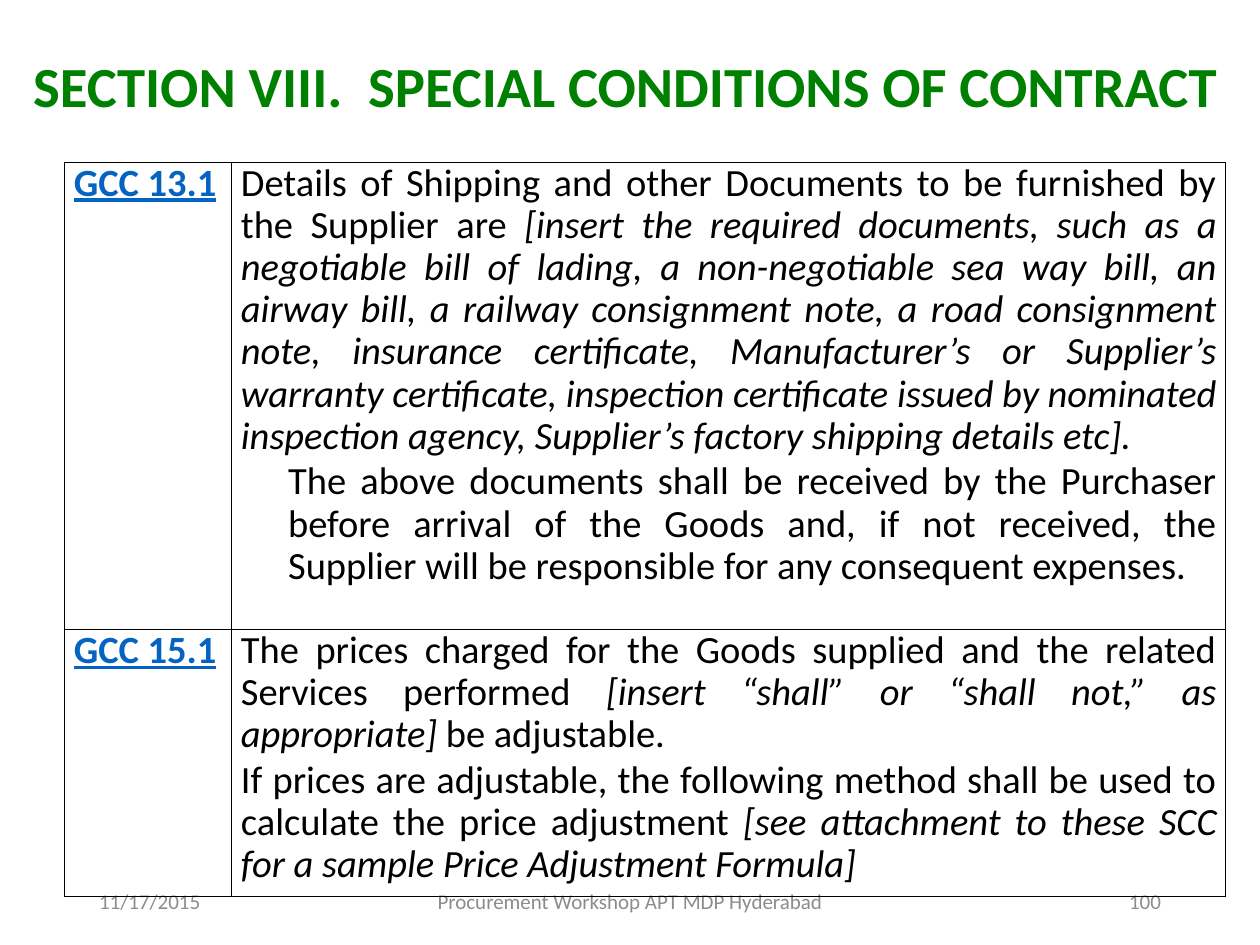
import pptx
import pptx.util
import pptx.dml.color
import pptx.enum.text
import pptx.oxml
import pptx.oxml.ns

Pt = pptx.util.Pt
ALIGN = pptx.enum.text.PP_ALIGN
ANCHOR = pptx.enum.text.MSO_ANCHOR


def color(hex_string):
    return pptx.dml.color.RGBColor.from_string(hex_string)


def write(paragraph, text, size=22, fill="000000", bold=False, italic=False,
          underline=False, align=ALIGN.LEFT, spacing=0.9, after=0):
    paragraph.alignment = align
    paragraph.line_spacing = spacing
    paragraph.space_after = Pt(after)
    run = paragraph.add_run()
    run.text = text
    run.font.name = "Calibri"
    run.font.size = Pt(size)
    run.font.bold = bold
    run.font.italic = italic
    run.font.underline = underline
    run.font.color.rgb = color(fill)


deck = pptx.Presentation()
deck.slide_width, deck.slide_height = Pt(720), Pt(540)
slide = deck.slides.add_slide(deck.slide_layouts[6])

# Title and footer line
footer = dict(size=12, fill="8C8C8C", spacing=1.0)
lines = [
    ("SECTION VIII.  SPECIAL CONDITIONS OF CONTRACT", (8.6, 20.9, 697.7, 51.1), ANCHOR.BOTTOM,
     dict(size=32.4, fill="008000", bold=True, align=ALIGN.CENTER)),
    ("11/17/2015", (49.5, 500.5, 162, 28.75), ANCHOR.MIDDLE, footer),
    ("Procurement Workshop APT MDP Hyderabad", (238.5, 500.5, 243, 28.75), ANCHOR.MIDDLE,
     dict(footer, align=ALIGN.CENTER)),
    ("100", (508.5, 500.5, 162, 28.75), ANCHOR.MIDDLE, dict(footer, align=ALIGN.RIGHT)),
]
for text, place, anchor, style in lines:
    frame = slide.shapes.add_textbox(*[Pt(length) for length in place]).text_frame
    frame.word_wrap = True
    frame.vertical_anchor = anchor
    write(frame.paragraphs[0], text, **style)

# Clauses: heading, row height, then paragraphs as (indent, [(text, italic)])
clauses = [
    ("GCC 13.1", 267, [
        (0, [("Details of Shipping and other Documents to be furnished by the Supplier are ", False),
             ("[insert the required documents, such as a negotiable bill of lading, "
              "a non-negotiable sea way bill, an airway bill, a railway consignment note, "
              "a road consignment note, insurance certificate, Manufacturer’s or Supplier’s "
              "warranty certificate, inspection certificate issued by nominated inspection "
              "agency, Supplier’s factory shipping details etc].", True)]),
        (27, [("The above documents shall be received by the Purchaser before arrival of the "
               "Goods and, if not received, the Supplier will be responsible for any "
               "consequent expenses.", False)]),
    ]),
    ("GCC 15.1", 152.5, [
        (0, [("The prices charged for the Goods supplied and the related Services performed ", False),
             ("[insert “shall” or “shall not,” as appropriate]", True),
             (" be adjustable.", False)]),
        (0, [("If prices are adjustable, the following method shall be used to calculate "
              "the price adjustment ", False),
             ("[see attachment to these SCC for a sample Price Adjustment Formula]", True)]),
    ]),
]
table = slide.shapes.add_table(2, 2, Pt(37), Pt(92.9), Pt(663.5), Pt(419.5)).table
table.first_row = table.horz_banding = False
table.columns[0].width, table.columns[1].width = Pt(95.5), Pt(568)

# Clause text
for row, (heading, height, paragraphs) in enumerate(clauses):
    table.rows[row].height = Pt(height)
    write(table.cell(row, 0).text_frame.paragraphs[0], heading, fill="0563C1",
          bold=True, underline=True, after=2)
    frame = table.cell(row, 1).text_frame
    for number, (indent, pieces) in enumerate(paragraphs):
        paragraph = frame.add_paragraph() if number else frame.paragraphs[0]
        if indent:
            paragraph._p.get_or_add_pPr().set("marL", str(Pt(indent)))
        for text, italic in pieces:
            write(paragraph, text, italic=italic, align=ALIGN.JUSTIFY, after=2)

# Thin black cell borders, no fill
for cell in table.iter_cells():
    cell.margin_left = cell.margin_right = Pt(5.2)
    cell.margin_top = cell.margin_bottom = 0
    properties = cell._tc.get_or_add_tcPr()
    for side in "LRTB":
        properties.append(pptx.oxml.parse_xml(
            f'<a:ln{side} {pptx.oxml.ns.nsdecls("a")} w="{Pt(0.75)}"><a:solidFill>'
            f'<a:srgbClr val="000000"/></a:solidFill></a:ln{side}>'))
    cell.fill.background()

deck.save("out.pptx")
